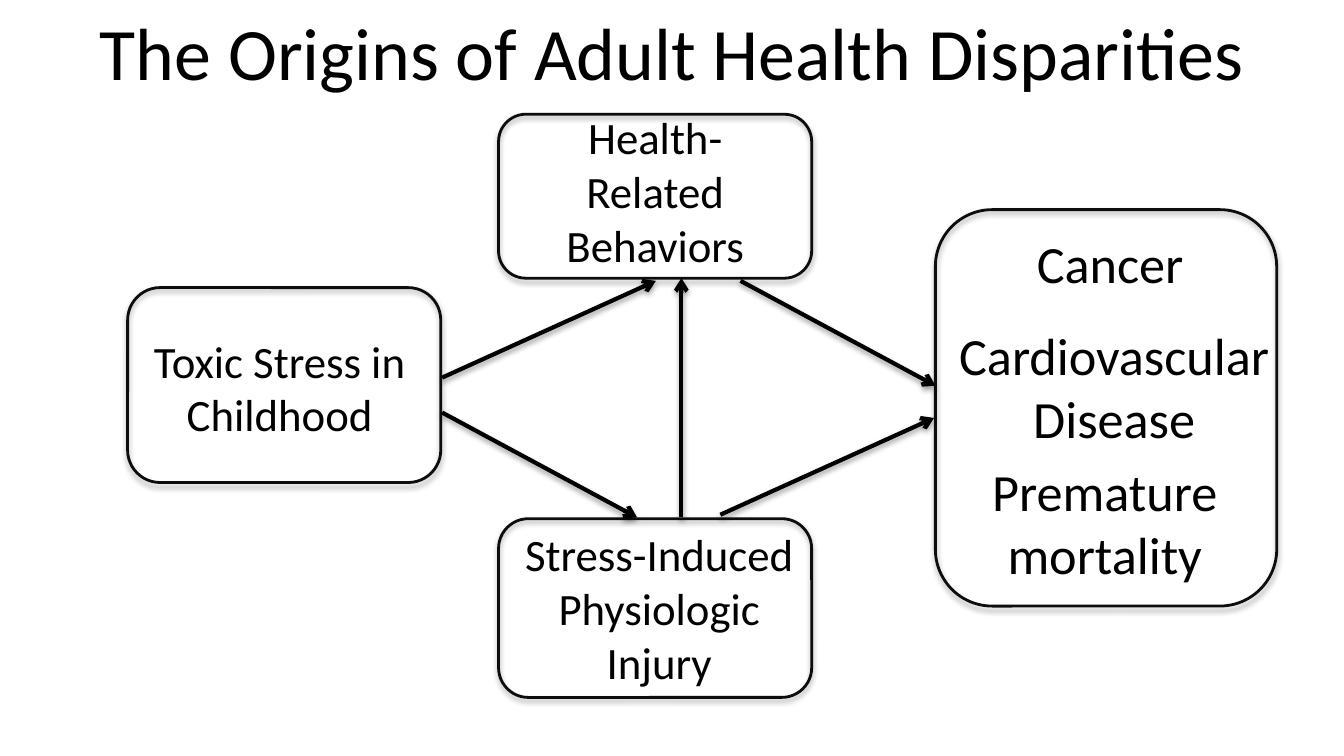
from lxml import etree
from pptx import Presentation
from pptx.dml.color import RGBColor
from pptx.enum.shapes import MSO_CONNECTOR, MSO_SHAPE
from pptx.enum.text import MSO_ANCHOR, MSO_AUTO_SIZE, PP_ALIGN
from pptx.oxml.ns import qn
from pptx.util import Inches, Pt

ROUNDED = MSO_SHAPE.ROUNDED_RECTANGLE
STRAIGHT = MSO_CONNECTOR.STRAIGHT
CENTER = PP_ALIGN.CENTER
MIDDLE = MSO_ANCHOR.MIDDLE
GROW = MSO_AUTO_SIZE.SHAPE_TO_FIT_TEXT

COLORS = {"text": "000000", "outline": "0D0D0D", "arrow": "000000", "shadow": "000000"}
FONT = "Calibri"
SLIDE_WIDTH = Inches(10)
SLIDE_HEIGHT = SLIDE_WIDTH * 9 // 16  # widescreen
CELL = SLIDE_WIDTH / 100  # square grid, 100 columns across the slide

# Outlines: left, top, width, height in grid cells
BOX_WIDTH = 23.3
MIDDLE_LEFT = 37.1
BOXES = [
    (9.5, 21.4, BOX_WIDTH, 14.5),          # childhood stress
    (MIDDLE_LEFT, 8.5, BOX_WIDTH, 12.2),   # behaviors
    (MIDDLE_LEFT, 38.6, BOX_WIDTH, 13.3),  # injury
    (69.6, 15.6, 25.4, 29.5),              # outcomes
]

# Labels: wording, size, frame in grid cells
CAUSE_SIZE, OUTCOME_SIZE = 24, 28
LABELS = [
    ("Toxic Stress in Childhood", CAUSE_SIZE, (8.7, 24.3, 24.2, 9.1)),
    ("Health-Related Behaviors", CAUSE_SIZE, (37.8, 7.7, 21.9, 13.1)),
    ("Stress-Induced Physiologic Injury", CAUSE_SIZE, (37.8, 38.7, 22.5, 13.1)),
    ("Cancer", OUTCOME_SIZE, (70.2, 16.7, 24.8, 5.7)),
    ("Cardiovascular Disease", OUTCOME_SIZE, (70.2, 23.6, 25.4, 10.4)),
    ("Premature mortality", OUTCOME_SIZE, (69.5, 33.7, 25.4, 10.4)),
]

# Arrows: start and end in grid cells
ARROWS = [
    ((32.9, 30.7), (47.4, 38.5)),  # stress to injury
    ((32.9, 28.1), (48.8, 20.9)),  # stress to behaviors
    ((53.6, 38.3), (69.5, 31.1)),  # injury to outcomes
    ((55.1, 20.9), (69.6, 28.7)),  # behaviors to outcomes
    ((50.7, 38.5), (50.7, 20.7)),  # injury to behaviors
]


def cells(values):
    return [round(value * CELL) for value in values]


def color(name):
    return RGBColor.from_string(COLORS[name])


def add_shadow(shape, distance, opacity):
    """Cast a soft shadow straight down; distance in points, opacity in percent."""
    effects = etree.SubElement(shape._element.spPr, qn("a:effectLst"))
    shadow = etree.SubElement(
        effects, qn("a:outerShdw"), blurRad=str(Pt(3.1)), dist=str(Pt(distance)),
        dir="5400000", rotWithShape="0")
    tint = etree.SubElement(shadow, qn("a:srgbClr"), val=COLORS["shadow"])
    etree.SubElement(tint, qn("a:alpha"), val=str(opacity * 1000))


def write_text(text_frame, text, size):
    text_frame.text = text
    text_frame.word_wrap = True
    paragraph = text_frame.paragraphs[0]
    paragraph.alignment = CENTER
    for run in paragraph.runs:
        run.font.name = FONT
        run.font.size = Pt(size)
        run.font.color.rgb = color("text")


def add_title(slide, text):
    title = slide.shapes.title
    title.left, title.top, title.width, title.height = cells((5, 0.7, 90, 6.2))
    write_text(title.text_frame, text, 39.6)
    title.text_frame.vertical_anchor = MIDDLE


def add_box(slide, frame):
    box = slide.shapes.add_shape(ROUNDED, *cells(frame))
    box.fill.background()
    box.line.color.rgb = color("outline")
    box.line.width = Pt(1.5)
    add_shadow(box, 1.8, 35)


def add_label(slide, text, size, frame):
    label = slide.shapes.add_textbox(*cells(frame))
    write_text(label.text_frame, text, size)
    label.text_frame.auto_size = GROW


def add_arrow(slide, start, end):
    arrow = slide.shapes.add_connector(STRAIGHT, *cells(start + end))
    arrow.line.color.rgb = color("arrow")
    arrow.line.width = Pt(2.25)
    etree.SubElement(arrow.line._get_or_add_ln(), qn("a:tailEnd"), type="arrow")
    add_shadow(arrow, 1.6, 38)


def main():
    presentation = Presentation()
    presentation.slide_width = SLIDE_WIDTH
    presentation.slide_height = SLIDE_HEIGHT
    title_only = presentation.slide_layouts[5]
    slide = presentation.slides.add_slide(title_only)

    add_title(slide, "The Origins of Adult Health Disparities")
    for frame in BOXES:
        add_box(slide, frame)
    for text, size, frame in LABELS:
        add_label(slide, text, size, frame)
    for start, end in ARROWS:
        add_arrow(slide, start, end)

    presentation.save("out.pptx")


if __name__ == "__main__":
    main()
